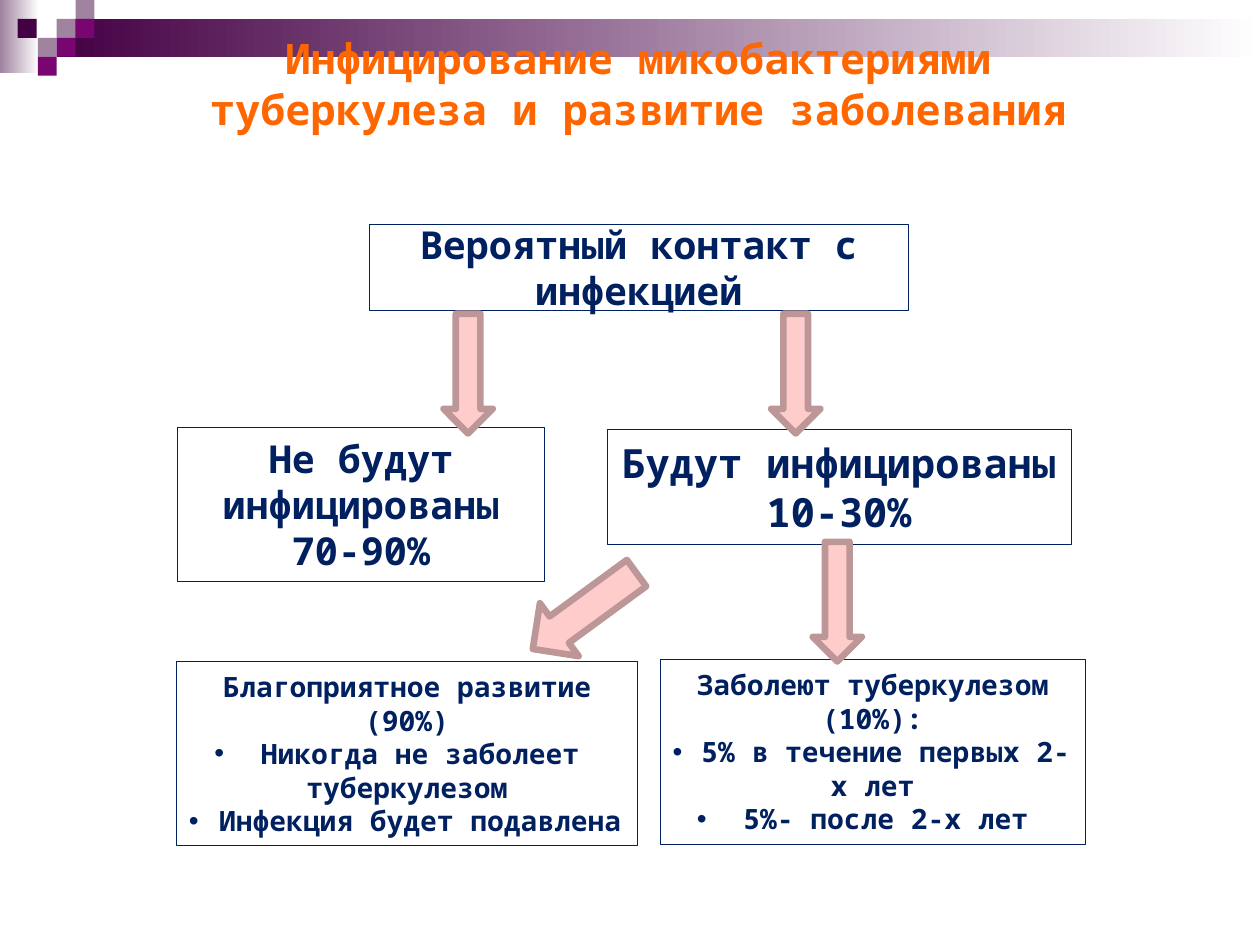
"""Builds a slide on tuberculosis infection and the development of the disease."""
import pptx
import pptx.dml.color
import pptx.enum.shapes
import pptx.enum.text
import pptx.oxml.ns
import pptx.util
from lxml import etree

COLOURS = {
    "navy": "002060", "orange": "FF6600", "white": "FFFFFF", "pink": "FFCCCC", "rose": "BD9797",
    "plum": "440044", "violet": "790571", "mauve": "9F839F",
}
COLUMNS, ROWS = 100, 75
SHAPES = pptx.enum.shapes.MSO_SHAPE
ANCHORS = pptx.enum.text.MSO_ANCHOR


def colour(name):
    return pptx.dml.color.RGBColor.from_string(COLOURS[name])


class Board:
    def __init__(self, deck):
        self.column, self.row = deck.slide_width / COLUMNS, deck.slide_height / ROWS
        self.shapes = deck.slides.add_slide(deck.slide_layouts[6]).shapes
        self.font = {"name": "Noto Sans Mono", "bold": True}

    def place(self, left, top, width, height):
        return [int(n) for n in (left * self.column, top * self.row,
                                 width * self.column, height * self.row)]

    def figure(self, kind, place, fill, line=None, weight=0.25):
        figure = self.shapes.add_shape(kind, *self.place(*place))
        figure.shadow.inherit = False
        figure.fill.solid()
        figure.fill.fore_color.rgb = colour(fill)
        if line:
            figure.line.color.rgb = colour(line)
            figure.line.width = pptx.util.Pt(weight)
        else:
            figure.line.fill.background()
        return figure

    def fade(self, place, start):
        band = self.figure(SHAPES.RECTANGLE, place, start)
        band.fill.gradient()
        band.fill.gradient_angle = 0
        for stop, name in zip(band.fill.gradient_stops, (start, "white")):
            stop.color.rgb = colour(name)

    def lettering(self, holder, lines, size, ink, anchor, bullets_from=None):
        frame = holder.text_frame
        for key, value in {"word_wrap": True, "vertical_anchor": anchor}.items():
            setattr(frame, key, value)
        for index, line in enumerate(lines):
            paragraph = frame.paragraphs[0] if index == 0 else frame.add_paragraph()
            paragraph.alignment = pptx.enum.text.PP_ALIGN.CENTER
            if bullets_from is not None and index >= bullets_from:
                properties = paragraph._p.get_or_add_pPr()
                for tag, key, value in (("buFont", "typeface", "Arial"), ("buChar", "char", "•")):
                    etree.SubElement(properties, pptx.oxml.ns.qn(f"a:{tag}")).set(key, value)
            run = paragraph.add_run()
            run.text = line
            for key, value in {**self.font, "size": pptx.util.Pt(size)}.items():
                setattr(run.font, key, value)
            run.font.color.rgb = colour(ink)

    def title(self, place, text):
        heading = self.shapes.add_textbox(*self.place(*place))
        self.lettering(heading, [text], 24, "orange", ANCHORS.TOP)

    def box(self, place, lines, size, weight=0.25, bullets_from=None):
        panel = self.figure(SHAPES.RECTANGLE, place, "white", "navy", weight)
        self.lettering(panel, lines, size, "navy", ANCHORS.MIDDLE, bullets_from)

    def arrow(self, place, turn=0):
        self.figure(SHAPES.DOWN_ARROW, place, "pink", "rose", 3.78).rotation = turn


def main():
    deck = pptx.Presentation()
    deck.slide_width, deck.slide_height = pptx.util.Inches(10), pptx.util.Inches(7.5)
    board = Board(deck)

    board.fade((0, 0, 3.1, 5.8), "mauve")
    board.fade((4.5, 1.5, 95.5, 3), "plum")
    tiles = {"mauve": [(4.5, 1.5), (6, 0), (3, 3)],
             "violet": [(6, 1.5), (4.5, 3), (3, 4.5)],
             "plum": [(1.4, 1.5)]}
    for tint, corners in tiles.items():
        for corner in corners:
            board.figure(SHAPES.RECTANGLE, (*corner, 1.5, 1.5), tint)

    board.box((29.3, 17.8, 42.8, 6.8), ["Вероятный контакт с инфекцией"], 22)
    board.box((48.2, 34.1, 36.8, 9.1), ["Будут инфицированы 10-30%"], 23, weight=0.5)
    board.box((52.4, 52.3, 33.7, 14.7),
              ["Заболеют туберкулезом (10%):", " 5% в течение первых 2-х лет", " 5%- после 2-х лет"],
              16, bullets_from=1)
    board.box((14.1, 33.9, 29.1, 12.2), ["Не будут инфицированы", "70-90%"], 22)
    board.box((14, 52.5, 36.6, 14.6),
              ["Благоприятное развитие (90%)", " Никогда не заболеет туберкулезом",
               " Инфекция будет подавлена"],
              16, bullets_from=1)
    board.title((15.2, 2.1, 70.9, 9.1),
                "Инфицирование микобактериями туберкулеза и развитие заболевания")

    board.arrow((43.8, 43.4, 5.2, 10.2), turn=53.8)
    for left, top in ((64.5, 43), (61.2, 24.9), (35.2, 24.9)):
        board.arrow((left, top, 3.9, 9.5))

    deck.save("out.pptx")


if __name__ == "__main__":
    main()
